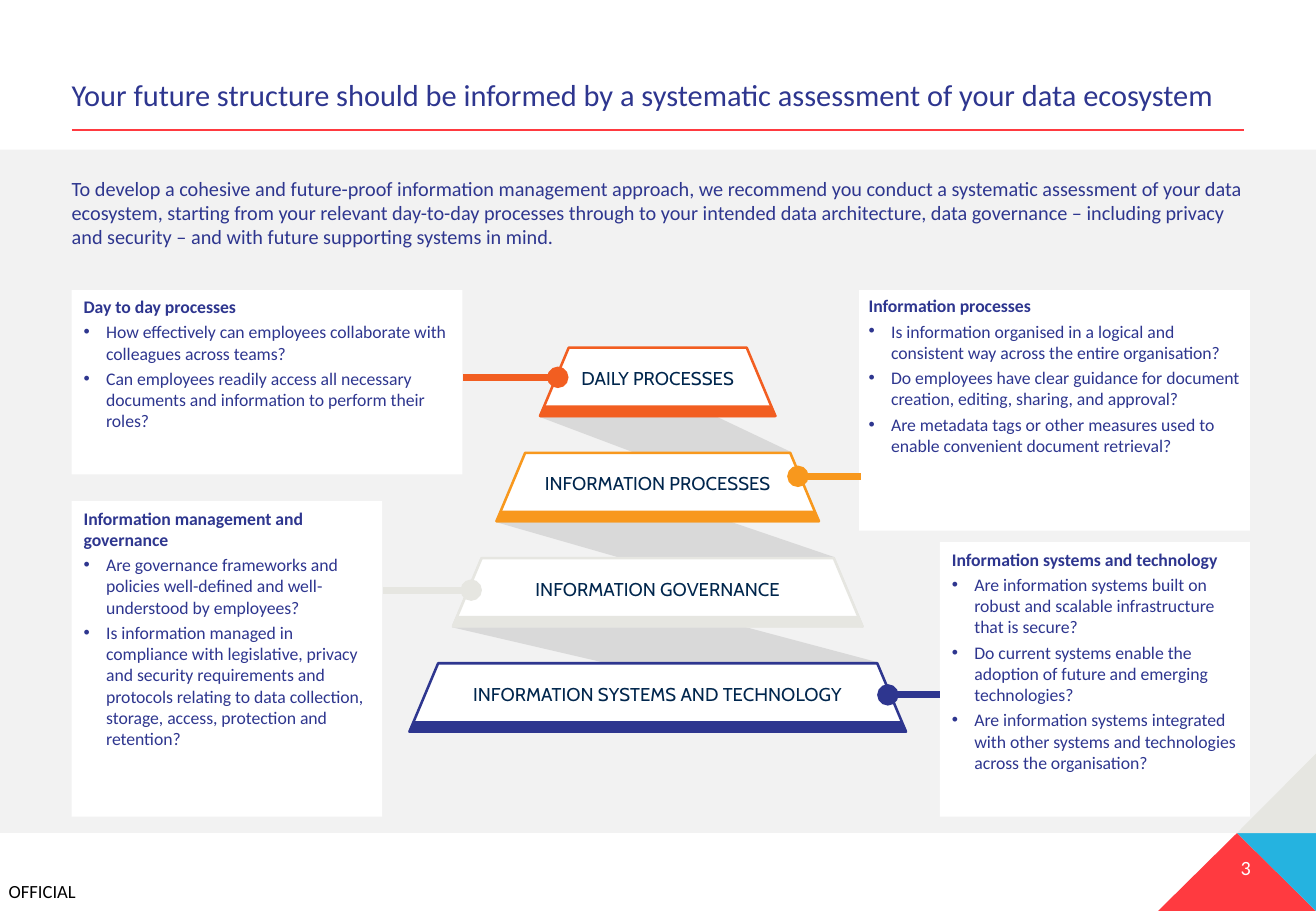
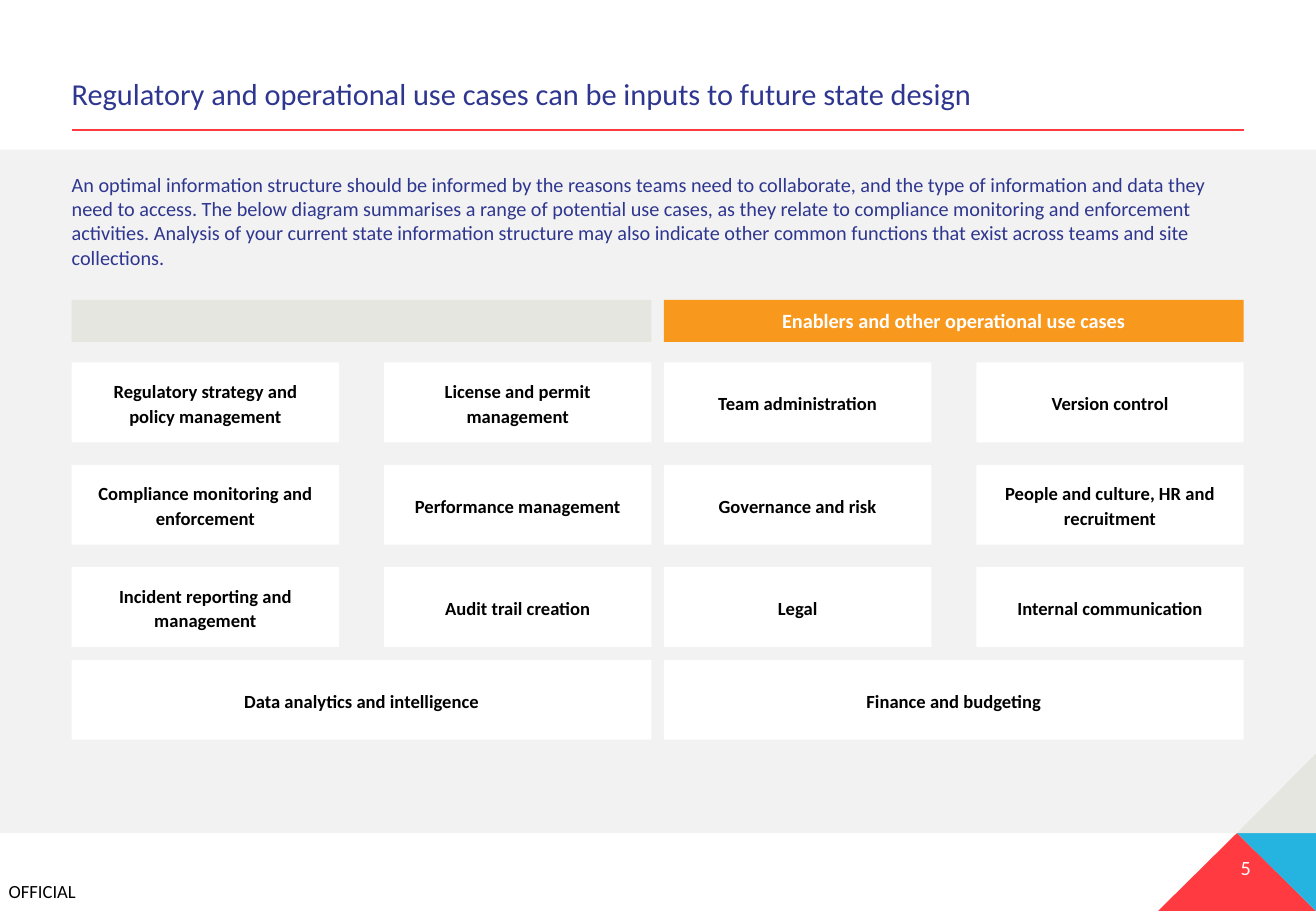
from dataclasses import dataclass

from lxml import etree
from pptx import Presentation
from pptx.dml.color import RGBColor as Rgb
from pptx.enum.shapes import MSO_CONNECTOR as Connector, MSO_SHAPE as Preset
from pptx.enum.text import MSO_ANCHOR as Anchor, PP_ALIGN as Align
from pptx.oxml.ns import qn
from pptx.util import Cm, Pt


@dataclass(frozen=True)
class Theme:
    font: str = "Calibri"
    tier_font: str = "Cabin"
    white: str = "FFFFFF"
    black: str = "000000"
    navy: str = "2E368F"
    ink: str = "00264D"
    band: str = "F2F2F2"
    shade: str = "D9D9D9"
    stone: str = "E6E6E1"
    red: str = "FF3A40"
    blue: str = "25B3E0"
    amber: str = "F8981D"
    orange: str = "F25E21"
    title_size: float = 18
    body_size: float = 12
    label_size: float = 11
    card_size: float = 10.5


THEME = Theme()
WIDTH, HEIGHT = 27.51, 19.05
MARGIN, CONTENT_WIDTH = 1.5, 24.5
BAND_TOP, BAND_BOTTOM = 3.13, 17.42

# Pyramid measures in cm: each tier is wider than the one above by a fixed step
TIER_CENTRE, TIER_TOP, TIER_PITCH, TIER_HEIGHT = 13.75, 7.27, 2.2, 1.43
TIER_HALF, TIER_STEP, TIER_SLANT = 2.46, 0.91, 0.6
BAR_HEIGHT, BAR_INSET = 0.2, 0.09

TIERS = [
    ("DAILY PROCESSES", THEME.orange),
    ("INFORMATION PROCESSES", THEME.amber),
    ("INFORMATION GOVERNANCE", THEME.stone),
    ("INFORMATION SYSTEMS AND TECHNOLOGY", THEME.navy),
]

# Card: left, top, width, height, side and top insets, heading, questions
CARDS = [
    (1.5, 6.07, 8.17, 3.85, 0.25, 0.12, "Day to day processes", [
        "How effectively can employees collaborate with colleagues across teams?",
        "Can employees readily access all necessary documents and information to "
        "perform their roles?"]),
    (1.5, 10.48, 6.49, 6.6, 0.25, 0.13, "Information management and governance", [
        "Are governance frameworks and policies well-defined and well-understood "
        "by employees?",
        "Is information managed in compliance with legislative, privacy and security "
        "requirements and protocols relating to data collection, storage, access, "
        "protection and retention?"]),
    (17.96, 6.07, 8.17, 5.03, 0.2, 0.1, "Information processes", [
        "Is information organised in a logical and consistent way across the entire "
        "organisation?",
        "Do employees have clear guidance for document creation, editing, sharing, "
        "and approval?",
        "Are metadata tags or other measures used to enable convenient document "
        "retrieval?"]),
    (19.65, 11.34, 6.48, 5.74, 0.25, 0.13, "Information systems and technology", [
        "Are information systems built on robust and scalable infrastructure that "
        "is secure?",
        "Do current systems enable the adoption of future and emerging technologies?",
        "Are information systems integrated with other systems and technologies "
        "across the organisation?"]),
]

# Callout from tier to card: start x, end x, y
CALLOUTS = [(11.66, 9.68, 7.89), (16.68, 18, 9.96), (9.85, 8, 12.34), (18.56, 19.65, 14.53)]

# Use cases: heading, colour, rows of two, wide closing tile
USE_CASES = [
    (None, THEME.stone, [
        ("Regulatory strategy and policy management", "License and permit management"),
        ("Compliance monitoring and enforcement", "Performance management"),
        ("Incident reporting and management", "Audit trail creation")],
     "Data analytics and intelligence"),
    ("Enablers and other operational use cases", THEME.amber, [
        ("Team administration", "Version control"),
        ("Governance and risk", "People and culture, HR and recruitment"),
        ("Legal", "Internal communication")],
     "Finance and budgeting"),
]


# Text helpers
def style_para(para, size, color, bold=False, font=THEME.font):
    para.font.name = font
    para.font.size = Pt(size)
    para.font.bold = bold
    para.font.color.rgb = Rgb.from_string(color)


def set_frame(shape, insets, anchor=Anchor.TOP):
    frame = shape.text_frame
    frame.word_wrap = True
    frame.vertical_anchor = anchor
    (frame.margin_left, frame.margin_top,
     frame.margin_right, frame.margin_bottom) = map(Cm, insets)
    return frame


def write(shape, text, size, color, insets=(0, 0.13, 0, 0.13), anchor=Anchor.TOP,
          align=Align.LEFT, spacing=None, **font):
    para = set_frame(shape, insets, anchor).paragraphs[0]
    para.text = text
    para.alignment = align
    para.line_spacing = spacing
    style_para(para, size, color, **font)


def add_bullet(para, indent):
    props = para._p.get_or_add_pPr()
    props.set("marL", str(Cm(indent)))
    props.set("indent", str(-Cm(indent)))
    etree.SubElement(props, qn("a:buFont")).set("typeface", "Arial")
    etree.SubElement(props, qn("a:buChar")).set("char", "•")


# Shape helpers
def paint(shape, fill, line=None, weight=1.25):
    shape.shadow.inherit = False
    shape.fill.solid()
    shape.fill.fore_color.rgb = Rgb.from_string(fill)
    if line:
        shape.line.color.rgb = Rgb.from_string(line)
        shape.line.width = Pt(weight)
    else:
        shape.line.fill.background()
    return shape


def add_box(page, left, top, width, height, fill):
    area = map(Cm, (left, top, width, height))
    return paint(page.shapes.add_shape(Preset.RECTANGLE, *area), fill)


def add_text(page, left, top, width, height, text, size, color, **options):
    box = page.shapes.add_textbox(*map(Cm, (left, top, width, height)))
    write(box, text, size, color, **options)


def add_polygon(page, points, fill, line=None, weight=1.25):
    corners = [(Cm(x), Cm(y)) for x, y in points]
    builder = page.shapes.build_freeform(*corners[0])
    builder.add_line_segments(corners[1:], close=True)
    return paint(builder.convert_to_shape(), fill, line, weight)


def add_line(page, start, end, color, weight, dot=False):
    line = page.shapes.add_connector(Connector.STRAIGHT, *map(Cm, start + end))
    line.line.color.rgb = Rgb.from_string(color)
    line.line.width = Pt(weight)
    props = line.element.spPr
    if dot:
        etree.SubElement(props.find(qn("a:ln")), qn("a:headEnd")).set("type", "oval")
    etree.SubElement(props, qn("a:effectLst"))


# Parts found on every page
def add_page(deck, number, title, title_top, intro, intro_top):
    page = deck.slides.add_slide(deck.slide_layouts[6])
    add_text(page, 0.18, 18.41, 1.6, 0.46, "OFFICIAL", THEME.label_size, THEME.black,
             insets=(0, 0, 0, 0))
    add_box(page, 0, BAND_TOP, WIDTH, BAND_BOTTOM - BAND_TOP, THEME.band)
    peak = (25.86, BAND_BOTTOM)
    side, corner = (WIDTH, BAND_BOTTOM), (WIDTH, HEIGHT)
    add_polygon(page, [peak, (24.21, HEIGHT), corner], THEME.red)
    add_polygon(page, [side, peak, corner], THEME.blue)
    add_polygon(page, [(WIDTH, 15.76), peak, side], THEME.stone)
    add_text(page, 23.95, 17.75, 2.2, 0.76, number, THEME.body_size, THEME.white,
             align=Align.RIGHT)
    add_line(page, (MARGIN, 2.72), (MARGIN + CONTENT_WIDTH, 2.72), THEME.red, 1.25)
    add_text(page, MARGIN, title_top, CONTENT_WIDTH, 0.95, title, THEME.title_size,
             THEME.navy, anchor=Anchor.BOTTOM, spacing=0.9)
    add_text(page, MARGIN, intro_top, CONTENT_WIDTH, 2.06, intro, THEME.body_size,
             THEME.navy)
    return page


# Pyramid
def tier_edges(index):
    half = TIER_HALF + TIER_STEP * index
    top = TIER_TOP + TIER_PITCH * index
    return TIER_CENTRE - half, TIER_CENTRE + half, top, top + TIER_HEIGHT


def add_tier_shadow(page, index):
    left, _, top, bottom = tier_edges(index)
    _, next_right, next_top, next_bottom = tier_edges(index + 1)
    add_polygon(page, [(left, bottom), (left + TIER_SLANT, top),
                       (next_right - TIER_SLANT, next_top), (next_right, next_bottom)],
                THEME.shade, THEME.shade)


def add_tier(page, index, label, color):
    left, right, top, bottom = tier_edges(index)
    face = add_polygon(page, [(left + TIER_SLANT, top), (right - TIER_SLANT, top),
                              (right, bottom), (left, bottom)], THEME.white, color, 1.5)
    write(face, label, THEME.label_size, THEME.ink, insets=(0.2, 0, 0.2, 0.15),
          anchor=Anchor.MIDDLE, align=Align.CENTER, font=THEME.tier_font)
    bar_top = bottom - BAR_HEIGHT
    add_polygon(page, [(right, bottom), (left, bottom), (left + BAR_INSET, bar_top),
                       (right - BAR_INSET, bar_top)], color, color)


def add_card(page, left, top, width, height, side, edge, heading, questions):
    card = add_box(page, left, top, width, height, THEME.white)
    frame = set_frame(card, (side, edge, side, edge))
    for index, text in enumerate([heading, *questions]):
        para = frame.add_paragraph() if index else frame.paragraphs[0]
        para.text = text
        para.alignment = Align.LEFT
        if index:
            add_bullet(para, 0.47)
            para.space_before = Pt(2.4)
        style_para(para, THEME.card_size, THEME.navy, bold=not index)


# Use case tiles
def add_tile(page, left, top, width, text):
    tile = add_box(page, left, top, width, 1.67, THEME.white)
    write(tile, text, THEME.label_size, THEME.black, insets=(0.4, 0.13, 0.4, 0.13),
          anchor=Anchor.MIDDLE, align=Align.CENTER, spacing=1.1, bold=True)


def add_use_cases(page, left, heading, color, rows, closing):
    tile_width, column_pitch, row_pitch = 5.59, 6.53, 2.14
    full_width = column_pitch + tile_width
    header = add_box(page, left, 6.27, full_width, 0.88, color)
    if heading:
        write(header, heading, THEME.body_size, THEME.white, anchor=Anchor.MIDDLE,
              align=Align.CENTER, bold=True)
    for row, labels in enumerate(rows):
        for column, label in enumerate(labels):
            add_tile(page, left + column * column_pitch, 7.58 + row * row_pitch,
                     tile_width, label)
    add_tile(page, left, 13.8, full_width, closing)


def build_ecosystem(deck):
    page = add_page(
        deck, "3",
        "Your future structure should be informed by a systematic assessment of your "
        "data ecosystem", 1.55,
        "To develop a cohesive and future-proof information management approach, we "
        "recommend you conduct a systematic assessment of your data ecosystem, starting "
        "from your relevant day-to-day processes through to your intended data "
        "architecture, data governance – including privacy and security – and with "
        "future supporting systems in mind.", 3.55)
    for index in range(len(TIERS) - 1):
        add_tier_shadow(page, index)
    for index, (label, color) in enumerate(TIERS):
        add_tier(page, index, label, color)
    for card in CARDS:
        add_card(page, *card)
    for (start, end, y), (_, color) in zip(CALLOUTS, TIERS):
        add_line(page, (start, y), (end, y), color, 4.25, dot=True)


def build_use_cases(deck):
    page = add_page(
        deck, "5",
        "Regulatory and operational use cases can be inputs to future state design", 1.53,
        "An optimal information structure should be informed by the reasons teams need "
        "to collaborate, and the type of information and data they need to access. The "
        "below diagram summarises a range of potential use cases, as they relate to "
        "compliance monitoring and enforcement activities. Analysis of your current "
        "state information structure may also indicate other common functions that "
        "exist across teams and site collections.", 3.47)
    for index, group in enumerate(USE_CASES):
        add_use_cases(page, MARGIN + index * 12.38, *group)


def main():
    deck = Presentation()
    deck.slide_width, deck.slide_height = Cm(WIDTH), Cm(HEIGHT)
    build_ecosystem(deck)
    build_use_cases(deck)
    deck.save("out.pptx")


if __name__ == "__main__":
    main()
